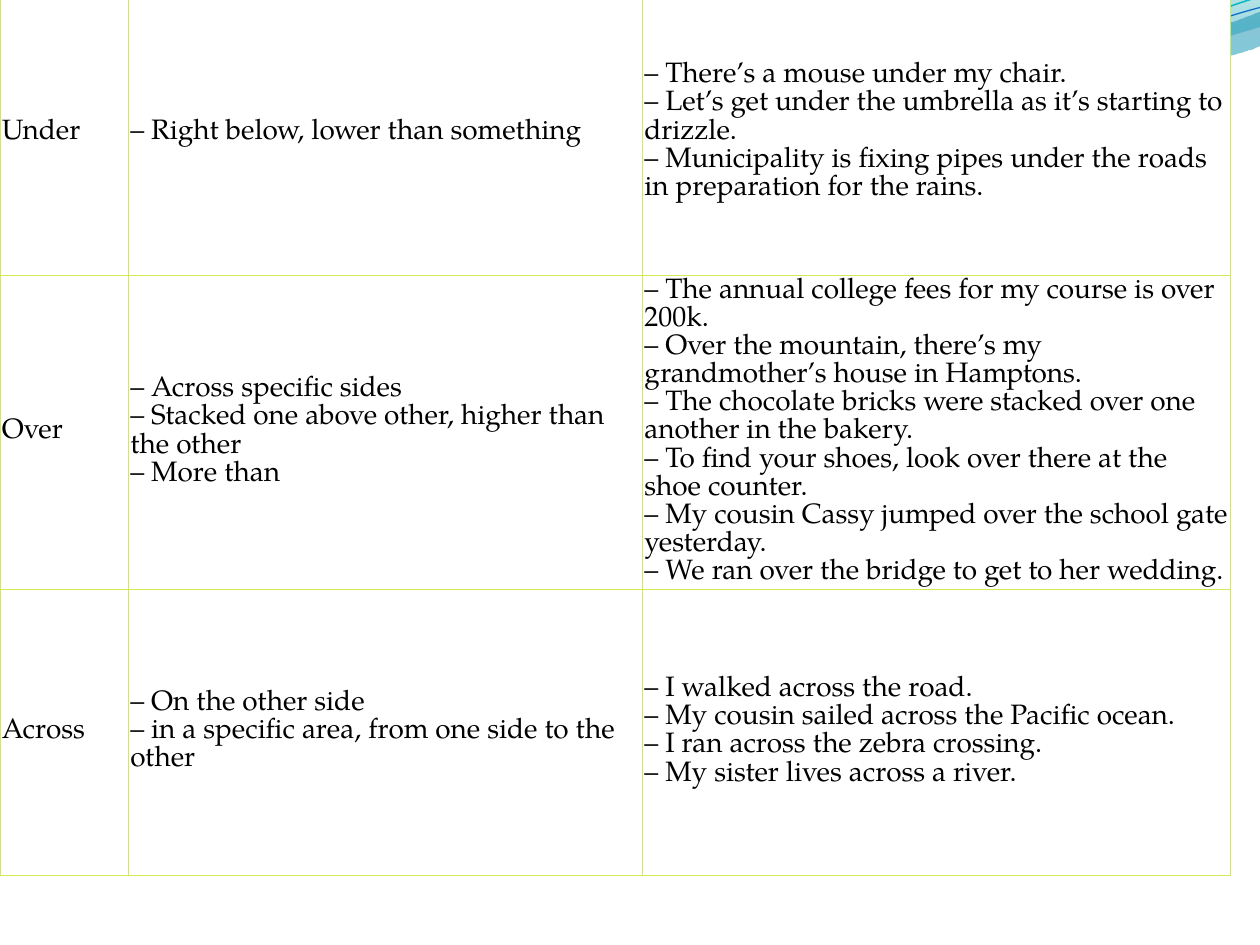
import math

from lxml import etree
from pptx import Presentation
from pptx.dml.color import RGBColor
from pptx.enum import text
from pptx.oxml import parse_xml
from pptx.oxml.ns import nsdecls, qn
from pptx.util import Pt

BLACK = RGBColor(0x00, 0x00, 0x00)
WHITE = RGBColor(0xFF, 0xFF, 0xFF)
LIME = RGBColor(0xD0, 0xEC, 0x55)
DEEP_BLUE = RGBColor(0x00, 0x74, 0xA1)
CYAN = RGBColor(0x00, 0xC6, 0xCF)
TEAL = RGBColor(0x00, 0xA1, 0xA9)
SEA_BLUE = RGBColor(0x00, 0x8B, 0xBF)
AQUA = RGBColor(0x0A, 0xB8, 0xBF)
BLUE = RGBColor(0x0F, 0x6F, 0xC6)
FONT = "TeX Gyre Pagella"
TILT = -2.7

prs = Presentation()
prs.slide_width, prs.slide_height = Pt(720), Pt(540)
slide = prs.slides.add_slide(prs.slide_layouts[6])


def add_wave(holder, segments, closed):
    points = [(Pt(x * 72), Pt(y * 72))
              for segment in segments
              for x, y in zip(segment[::2], segment[1::2])]
    builder = holder.build_freeform(*points[0])
    builder.add_line_segments(points[1:], close=closed)
    wave = builder.convert_to_shape()
    wave.shadow.inherit = False
    steps = iter(list(wave._element.iter(qn("a:lnTo"))))
    for segment in segments[1:]:
        step = next(steps)
        if len(segment) == 6:
            step.tag = qn("a:cubicBezTo")
            for _ in range(2):
                control = next(steps)
                step.append(control[0])
                control.getparent().remove(control)
    return wave


bands = [
    ([(0, 0), (4.4, -0.01), (4.76, 0.17, 6.64, 0.63, 7.58, 0.63),
      (8.53, 0.63, 9.58, 0.26, 10, 0.09), (10.01, 0.36),
      (9.83, 0.44, 8.7, 0.76, 7.46, 0.75), (6.22, 0.75, 3.82, 0.28, 2.57, 0.34),
      (1.29, 0.36, 0.46, 0.83, -0.01, 1.13), (0, 0)],
     [(0, DEEP_BLUE, 45), (1, CYAN, 55)]),
    ([(4.79, -0.01), (5.09, 0.11, 6.82, 0.62, 7.69, 0.65),
      (8.56, 0.69, 9.61, 0.32, 10, 0.21), (10, 0), (4.79, -0.01)],
     [(0, TEAL, 30), (0.8, SEA_BLUE, 45)]),
]
for segments, stops in bands:
    band = add_wave(slide.shapes, segments, True)
    band.line.fill.background()
    band.fill.gradient()
    band.fill.gradient_angle = 270
    for stop, (position, color, _) in zip(band.fill.gradient_stops, stops):
        stop.position = position
        stop.color.rgb = color
    for color_xml, (_, _, opacity) in zip(band._element.spPr.iter(qn("a:srgbClr")), stops):
        etree.SubElement(color_xml, qn("a:alpha")).set("val", str(opacity * 1000))

strands = [
    ([(0, 1.11), (0.48, 0.93, 1.58, 0.57, 2.77, 0.52),
      (3.95, 0.47, 5.93, 0.89, 7.13, 0.8), (8.33, 0.71, 9.38, 0.15, 9.98, -0.02)],
     (4.99, 0.575), AQUA, 0.85),
    ([(0, 1.04), (0.47, 0.96, 1.64, 0.61, 2.83, 0.56),
      (4.03, 0.51, 5.97, 0.84, 7.17, 0.75), (8.36, 0.67, 9.41, 0.21, 10, 0.06)],
     (5, 0.59), BLUE, 0.75),
]
strand_pair = slide.shapes.add_group_shape()
cos, sin = math.cos(math.radians(-TILT)), math.sin(math.radians(-TILT))
for segments, (cx, cy), color, width in strands:
    level = []
    for segment in segments:
        turned = []
        for x, y in zip(segment[::2], segment[1::2]):
            turned += [cx + (x - cx) * cos - (y - cy) * sin,
                       cy + (x - cx) * sin + (y - cy) * cos]
        level.append(turned)
    strand = add_wave(strand_pair.shapes, level, False)
    strand.rotation = TILT
    strand.fill.background()
    strand.line.color.rgb = color
    strand.line.width = Pt(width)

prepositions = [
    (["Under"],
     ["Right below, lower than something"],
     ["There’s a mouse under my chair.",
      "Let’s get under the umbrella as it’s starting to drizzle.",
      "Municipality is fixing pipes under the roads in preparation for the rains."]),
    (["Over"],
     ["Across specific sides",
      "Stacked one above other, higher than the other",
      "More than"],
     ["The annual college fees for my course is over 200k.",
      "Over the mountain, there’s my grandmother’s house in Hamptons.",
      "The chocolate bricks were stacked over one another in the bakery.",
      "To find your shoes, look over there at the shoe counter.",
      "My cousin Cassy jumped over the school gate yesterday.",
      "We ran over the bridge to get to her wedding."]),
    (["Across"],
     ["On the other side",
      "in a specific area, from one side to the other"],
     ["I walked across the road.",
      "My cousin sailed across the Pacific ocean.",
      "I ran across the zebra crossing.",
      "My sister lives across a river."]),
]
widths = [73.4, 293.8, 336.2]
row_height = 163.4
usage = slide.shapes.add_table(3, 3, Pt(0), Pt(-5.8), Pt(sum(widths)), Pt(540)).table
for column, width in zip(usage.columns, widths):
    column.width = Pt(width)
for row, entry in zip(usage.rows, prepositions):
    row.height = Pt(row_height)
    for index, (cell, lines) in enumerate(zip(row.cells, entry)):
        dash = "– " if index else ""
        wording = cell.text_frame.paragraphs[0]
        wording.text = "\v".join(dash + line for line in lines)
        for run in wording.runs:
            run.font.name = FONT
            run.font.size = Pt(16)
            run.font.bold = False
            run.font.color.rgb = BLACK
        cell.vertical_anchor = text.MSO_ANCHOR.MIDDLE
        cell.margin_left = cell.margin_right = cell.margin_top = cell.margin_bottom = Pt(1.1)
        cell.fill.solid()
        cell.fill.fore_color.rgb = WHITE
        for position, side in enumerate(("lnL", "lnR", "lnT", "lnB")):
            cell._tc.tcPr.insert(position, parse_xml(
                f'<a:{side} {nsdecls("a")} w="{Pt(0.75)}"><a:solidFill>'
                f'<a:srgbClr val="{LIME}"/></a:solidFill></a:{side}>'))

prs.save("out.pptx")
